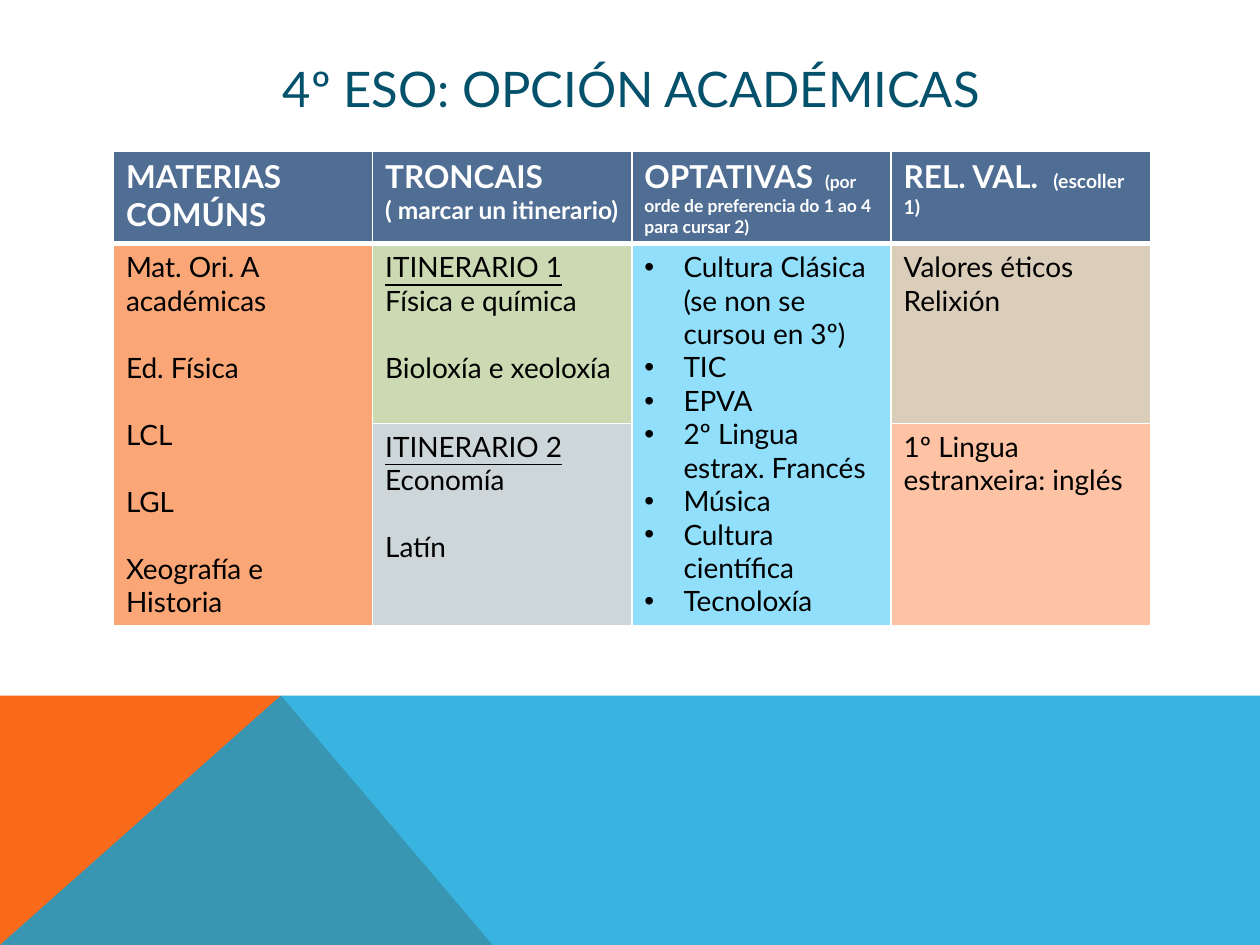
import pptx
import pptx.dml.color
import pptx.enum.text
import pptx.oxml
import pptx.oxml.ns
import pptx.util
import lxml.etree

WHITE, BLACK, NAVY = "FFFFFF", "000000", "506E94"
HORIZON = 0.736
PEAK = 0.223
LINE_GAP = 19.2  # one line of 16 point text


def color(hex_text):
    return pptx.dml.color.RGBColor.from_string(hex_text)


def add_element(parent, tag, **attributes):
    values = {name: str(value) for name, value in attributes.items()}
    return lxml.etree.SubElement(parent, pptx.oxml.ns.qn(tag), values)


class SlideBuilder:
    """Style and current slide; lengths are shares of the slide's size."""

    font = "Lato"
    body_size = 16

    def __init__(self, deck):
        self.width, self.height = deck.slide_width, deck.slide_height
        self.slide = deck.slides.add_slide(deck.slide_layouts[6])

    def point(self, x, y):
        return round(x * self.width), round(y * self.height)

    def polygon(self, corners, fill, opacity=100):
        points = [self.point(*corner) for corner in corners]
        builder = self.slide.shapes.build_freeform(*points[0])
        builder.add_line_segments(points[1:], close=True)
        shape = builder.convert_to_shape()
        shape.shadow.inherit = False
        shape.fill.solid()
        shape.fill.fore_color.rgb = color(fill)
        shape.line.fill.background()
        if opacity < 100:
            paint = shape.fill._xPr.find(".//" + pptx.oxml.ns.qn("a:srgbClr"))
            add_element(paint, "a:alpha", val=opacity * 1000)

    def run(self, para, text, size, ink, bold=False, underline=False):
        span = para.add_run()
        span.text = text
        span.font.name = self.font
        span.font.size = pptx.util.Pt(size)
        span.font.color.rgb = color(ink)
        span.font.bold = bold
        span.font.underline = underline

    def title(self, text, x, y, width, height):
        box = self.slide.shapes.add_textbox(*self.point(x, y), *self.point(width, height))
        frame = box.text_frame
        frame.word_wrap = True
        frame.vertical_anchor = pptx.enum.text.MSO_ANCHOR.MIDDLE
        para = frame.paragraphs[0]
        para.alignment = pptx.enum.text.PP_ALIGN.CENTER
        self.run(para, text, 28, "04516C")

    def table(self, x, y, width, row_heights, columns):
        frame = self.slide.shapes.add_table(
            len(row_heights), columns, *self.point(x, y),
            *self.point(width, sum(row_heights)))
        table = frame.table
        for row, height in zip(table.rows, row_heights):
            row.height = round(height * self.height)
        return table

    def paint_cell(self, cell, fill, bottom=1):
        properties = cell._tc.get_or_add_tcPr()
        for side, points in (("L", 1), ("R", 1), ("T", 1), ("B", bottom)):
            line = add_element(properties, "a:ln" + side, w=pptx.util.Pt(points))
            add_element(add_element(line, "a:solidFill"), "a:srgbClr", val=WHITE)
        cell.fill.solid()
        cell.fill.fore_color.rgb = color(fill)

    def header(self, cell, name, note, note_size, break_line=False):
        self.paint_cell(cell, NAVY, bottom=3)
        para = cell.text_frame.paragraphs[0]
        self.run(para, name, 18, WHITE, bold=True)
        if break_line:
            para.add_line_break()
        if note:
            self.run(para, note, note_size, WHITE, bold=True)

    def body(self, cell, lines, fill, heading=None, spaced=False, bullets=False):
        """Write one paragraph a line; spaced leaves a line's gap between them."""
        self.paint_cell(cell, fill)
        frame = cell.text_frame
        para = frame.paragraphs[0]
        if heading:
            self.run(para, heading, self.body_size, BLACK, underline=True)
            para = frame.add_paragraph()
        for index, text in enumerate(lines):
            if index:
                para = frame.add_paragraph()
                if spaced:
                    para.space_before = pptx.util.Pt(LINE_GAP)
            if bullets:
                self.bullet(para)
            self.run(para, text, self.body_size, BLACK)

    def bullet(self, para):
        properties = para._p.get_or_add_pPr()
        indent = pptx.util.Inches(0.31)
        properties.set("marL", str(indent))
        properties.set("indent", str(-indent))
        add_element(properties, "a:buFont", typeface="Arial")
        add_element(properties, "a:buChar", char="•")


def main():
    deck = pptx.Presentation()
    deck.slide_width = pptx.util.Inches(10)
    deck.slide_height = pptx.util.Inches(7.5)
    page = SlideBuilder(deck)

    page.polygon([(0, 1), (0, HORIZON), (PEAK, HORIZON), (0.391, 1)], "F96A1B")
    page.polygon([(0, 1), (PEAK, HORIZON), (1, HORIZON), (1, 1)], "08A1D9", opacity=80)
    page.title("4º ESO: OPCIÓN ACADÉMICAS", 0.09, 0.053, 0.822, 0.08)

    subjects = page.table(0.09, 0.16, 0.823, [0.098, 0.19, 0.212], columns=4)
    headers = [
        ("MATERIAS COMÚNS", "", 18),
        ("TRONCAIS", "( marcar un itinerario)", 14, True),
        ("OPTATIVAS ", " (por orde de preferencia do 1 ao 4 para cursar 2)", 10),
        ("REL. VAL.  ", "(escoller 1)", 11),
    ]
    for column, content in enumerate(headers):
        page.header(subjects.cell(0, column), *content)
    for column in (0, 2):
        subjects.cell(1, column).merge(subjects.cell(2, column))

    common = ["Mat. Ori. A académicas", "Ed. Física", "LCL", "LGL", "Xeografía e Historia"]
    electives = ["Cultura Clásica (se non se cursou en 3º)", "TIC", "EPVA",
                 "2º Lingua estrax. Francés", "Música", "Cultura científica", "Tecnoloxía"]
    page.body(subjects.cell(1, 0), common, "FBA676", spaced=True)
    page.body(subjects.cell(1, 1), ["Física e química", "Bioloxía e xeoloxía"], "CCDAB3",
              heading="ITINERARIO 1", spaced=True)
    page.body(subjects.cell(2, 1), ["Economía", "Latín"], "CDD7D9",
              heading="ITINERARIO 2", spaced=True)
    page.body(subjects.cell(1, 2), electives, "91DFFB", bullets=True)
    page.body(subjects.cell(1, 3), ["Valores éticos", "Relixión"], "DACEBB")
    page.body(subjects.cell(2, 3), ["1º Lingua estranxeira: inglés"], "FDC3A4")

    deck.save("out.pptx")


if __name__ == "__main__":
    main()
